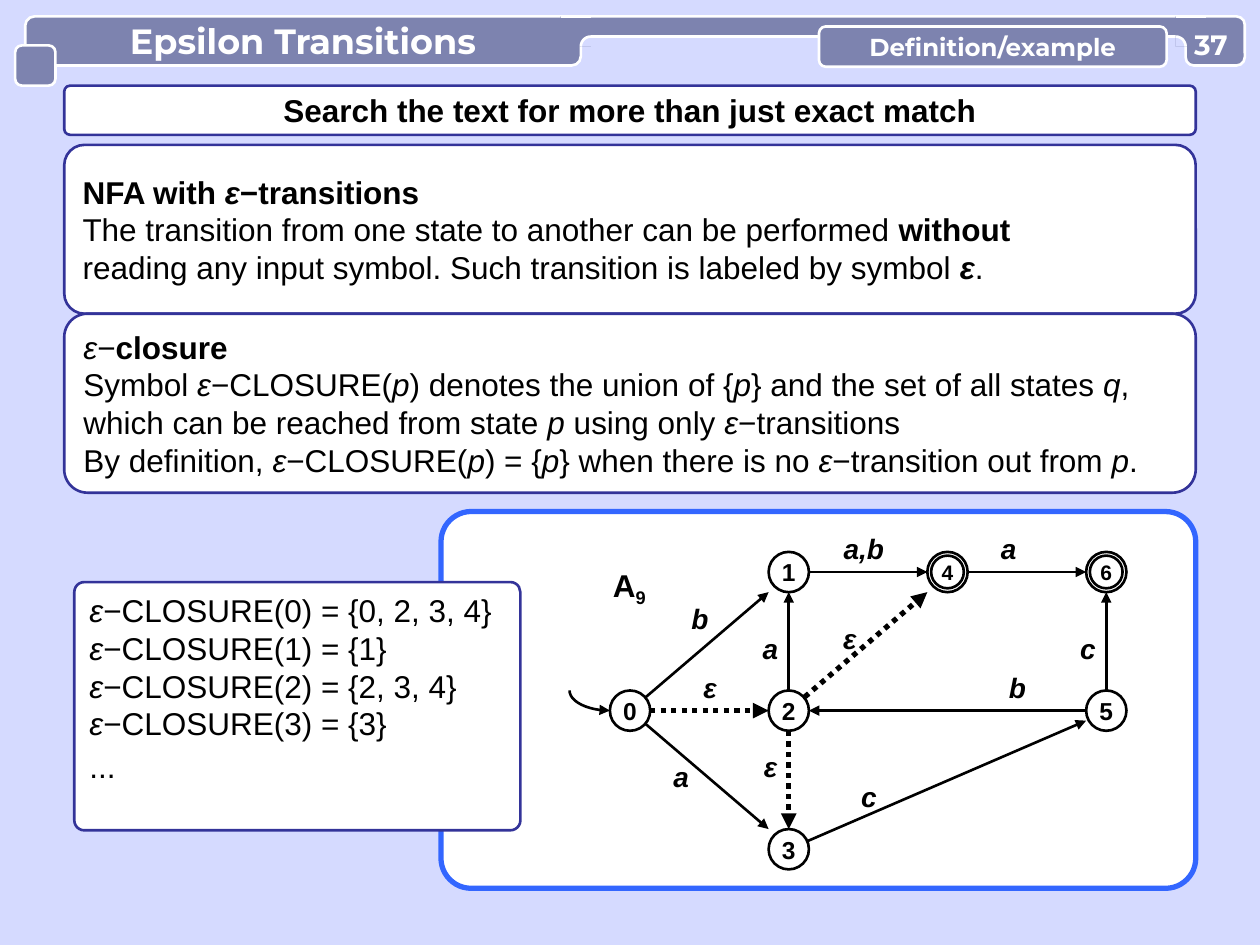
from dataclasses import dataclass
from math import cos, pi, sin

from lxml.etree import SubElement
from pptx import Presentation
from pptx.dml.color import RGBColor
from pptx.enum.dml import MSO_LINE
from pptx.enum.shapes import MSO_CONNECTOR, MSO_SHAPE
from pptx.enum.text import MSO_ANCHOR, MSO_AUTO_SIZE, PP_ALIGN
from pptx.oxml.ns import qn
from pptx.util import Inches, Pt


@dataclass(frozen=True)
class Theme:
    """Colours, fonts, type sizes and line widths."""
    background: str = "D5DAFF"
    header: str = "7D83AF"
    white: str = "FFFFFF"
    ink: str = "000000"
    panel: str = "333399"
    graph: str = "3366FF"
    body_font: str = "Arial"
    header_font: str = "Montserrat"
    title: int = 20
    body: int = 18
    label: int = 16
    state: int = 14
    final: int = 12
    thin: float = 1.5
    thick: float = 3


@dataclass(frozen=True)
class Box:
    """A rectangle in inches."""
    left: float
    top: float
    width: float
    height: float

    def inside(self, left, top, width, height):
        """Return a box placed relative to this one."""
        return Box(self.left + left, self.top + top, width, height)

    def lengths(self):
        """Return the four measures as lengths."""
        return [Inches(v) for v in (self.left, self.top, self.width, self.height)]


THEME = Theme()


def rgb(value):
    """Turn a hex string into a colour."""
    return RGBColor.from_string(value)


def square(x, y, radius):
    """Return the box around a circle."""
    return Box(x - radius, y - radius, 2 * radius, 2 * radius)


def paint(shape, fill, line, width=THEME.thin):
    """Set fill and line, where None means none."""
    shape.shadow.inherit = False
    for format_, color in ((shape.fill, fill), (shape.line.fill, line)):
        if color:
            format_.solid()
            format_.fore_color.rgb = rgb(color)
        else:
            format_.background()
    if line:
        shape.line.width = Pt(width)


def add_shape(slide, kind, box, fill, line, radius=None, width=THEME.thin):
    """Add a preset shape with an optional corner ratio."""
    shape = slide.shapes.add_shape(kind, *box.lengths())
    paint(shape, fill, line, width)
    if radius is not None:
        shape.adjustments[0] = radius
    return shape


def add_rounded(slide, box, radius, fill=THEME.header, line=THEME.white, width=THEME.thin):
    """Add a rounded rectangle."""
    return add_shape(slide, MSO_SHAPE.ROUNDED_RECTANGLE, box, fill, line, radius, width)


def write(shape, lines, size, color=THEME.ink, font=THEME.body_font, align=PP_ALIGN.CENTER,
          anchor=MSO_ANCHOR.MIDDLE, wrap=True, inset=(0.1, 0.05)):
    """Write lines in which stars mark bold and underscores inside them italic."""
    frame = shape.text_frame
    frame.auto_size, frame.word_wrap = MSO_AUTO_SIZE.NONE, wrap
    frame.vertical_anchor = anchor
    frame.margin_left = frame.margin_right = Inches(inset[0])
    frame.margin_top = frame.margin_bottom = Inches(inset[1])
    for index, line in enumerate(lines):
        paragraph = frame.add_paragraph() if index else frame.paragraphs[0]
        paragraph.alignment, paragraph.space_before = align, Pt(0)
        for bold, piece in enumerate(line.split("*")):
            for italic, text in enumerate(piece.split("_")):
                if text:
                    run = paragraph.add_run()
                    run.text = text
                    run.font.name, run.font.size = font, Pt(size)
                    run.font.bold, run.font.italic = bold % 2 == 1, italic % 2 == 1
                    run.font.color.rgb = rgb(color)
    return frame


def add_text(slide, box, text, size, **options):
    """Add a text box without insets."""
    return write(slide.shapes.add_textbox(*box.lengths()), [text], size, inset=(0, 0), **options)


def add_line(slide, start, end, color=THEME.ink, width=THEME.thin):
    """Add a straight line without shadow."""
    points = [Inches(v) for v in (*start, *end)]
    line = slide.shapes.add_connector(MSO_CONNECTOR.STRAIGHT, *points)
    line.line.color.rgb, line.line.width = rgb(color), Pt(width)
    SubElement(line._element.spPr, qn("a:effectLst"))
    return line


def add_arrowhead(line):
    """Put a triangle at the end of a line."""
    SubElement(line.line._get_or_add_ln(), qn("a:tailEnd"), type="triangle")


def add_quarter(slide, center, radii, start, turn, fill, line, steps=12):
    """Add a quarter ellipse, closed through its centre when filled."""
    angles = [start + turn * pi / 2 * step / steps for step in range(steps + 1)]
    points = [(center[0] + radii[0] * cos(a), center[1] + radii[1] * sin(a)) for a in angles]
    points += [center] if fill else []
    points = [(Inches(x), Inches(y)) for x, y in points]
    builder = slide.shapes.build_freeform(*points[0])
    builder.add_line_segments(points[1:], close=bool(fill))
    shape = builder.convert_to_shape()
    paint(shape, fill, line)
    return shape


def add_joint(slide, box, side):
    """Join a header tab to the bar, with the rounded notch on the given side."""
    add_shape(slide, MSO_SHAPE.RECTANGLE, box, THEME.header, None)
    right = box.left + box.width
    add_line(slide, (box.left, box.top), (right, box.top), THEME.white)
    center = (right if side < 0 else box.left, box.top + box.height)
    for fill, line in ((THEME.background, None), (None, THEME.white)):
        add_quarter(slide, center, (0.08, 0.08), -pi / 2, side, fill, line)


def add_header(slide, box):
    """Build the header bar with title, section and page number."""
    style = {"color": THEME.white, "font": THEME.header_font, "wrap": False}
    title_box = box.inside(0.08, 0, 4.41, 0.39)
    add_rounded(slide, title_box, 0.19)
    add_rounded(slide, box.inside(4.49, 0, 4.88, 0.16), 0.5)
    add_joint(slide, box.inside(4.33, 0, 0.24, 0.24), -1)
    add_rounded(slide, box.inside(0, 0.23, 0.32, 0.32), 0.17)
    add_rounded(slide, box.inside(9.29, 0, 0.47, 0.39), 0.17)
    add_joint(slide, box.inside(9.21, 0, 0.24, 0.24), 1)
    section = add_rounded(slide, box.inside(6.38, 0.08, 2.76, 0.32), 0.17)
    write(section, ["*Definition/example*"], THEME.state, **style)
    add_text(slide, box.inside(9.29, 0.09, 0.4, 0.27), "*37*", THEME.label, **style)
    title = slide.shapes.title
    title.left, title.top, title.width, title.height = title_box.lengths()
    write(title, ["*Epsilon Transitions*"], THEME.title, **style)
    slide.shapes._spTree.append(title._element)


def add_panel(slide, box, radius, lines, align=PP_ALIGN.LEFT):
    """Build a white panel with text."""
    panel = add_rounded(slide, box, radius, THEME.white, THEME.panel)
    write(panel, lines, THEME.body, align=align)


def add_closures(slide, box):
    """Build the list of closures on its panel."""
    add_rounded(slide, box, 0.04, THEME.white, THEME.panel)
    body = slide.placeholders[1]
    body.left, body.top, body.width, body.height = box.lengths()
    closures = ("0, 2, 3, 4", "1", "2, 3, 4", "3")
    lines = [f"_ε_−CLOSURE({state}) = {{{members}}}" for state, members in enumerate(closures)]
    frame = write(body, lines + ["..."], THEME.body, align=PP_ALIGN.LEFT,
                  anchor=MSO_ANCHOR.TOP, inset=(0.12, 0.07))
    for paragraph in frame.paragraphs:
        properties = paragraph._p.get_or_add_pPr()
        properties.set("marL", "0")
        properties.set("indent", "0")
        SubElement(properties, qn("a:buNone"))
    frame.paragraphs[-1].space_before = Pt(3)
    slide.shapes._spTree.append(body._element)


def add_automaton(slide, box):
    """Build the state diagram on its panel."""
    add_rounded(slide, box, 0.08, THEME.white, THEME.graph, width=THEME.thick)
    radius = 0.16
    grid = {0: (0, 1), 1: (1, 0), 2: (1, 1), 3: (1, 2), 4: (2, 0), 5: (3, 1), 6: (3, 0)}
    states = {name: (box.left + 1.5 + 1.26 * column, box.top + 0.48 + 1.1 * row)
              for name, (column, row) in grid.items()}
    middle, up, down, left, right = (0, 0), (0, -1), (0, 1), (-1, 0), (1, 0)
    edges = [
        (0, middle, 3, (-1, -1), "a", (1.9, 1.97)), (0, middle, 1, (-1, 1), "b", (2.05, 0.71)),
        (5, up, 6, down, "c", (5.13, 0.95)), (3, middle, 5, (-1, 0.5), "c", (3.39, 2.13)),
        (2, middle, 4, (-1, 1), "ε", (3.24, 0.87)), (0, right, 2, left, "ε", (2.13, 1.26)),
        (2, up, 1, down, "a", (2.61, 0.95)), (2, down, 3, up, "ε", (2.61, 1.89)),
        (5, left, 2, right, "b", (4.57, 1.26)), (1, right, 4, left, "a,b", (3.35, 0.16)),
        (4, right, 6, left, "a", (4.5, 0.16)),
    ]
    for source, source_side, target, target_side, label, (x, y) in edges:
        start, end = ([c + radius * s for c, s in zip(states[name], side)]
                      for name, side in ((source, source_side), (target, target_side)))
        line = add_line(slide, start, end, width=THEME.thick if label == "ε" else THEME.thin)
        if label == "ε":
            line.line.dash_style = MSO_LINE.ROUND_DOT
        add_arrowhead(line)
        add_text(slide, box.inside(x - 0.27, y, 0.55, 0.32), f"*_{label}_*", THEME.label,
                 anchor=MSO_ANCHOR.TOP)
    for name, center in states.items():
        circle = add_shape(slide, MSO_SHAPE.OVAL, square(*center, radius), THEME.white, THEME.ink)
        size = THEME.state
        if name in (4, 6):
            circle = add_shape(slide, MSO_SHAPE.OVAL, square(*center, 0.13), THEME.white, THEME.ink)
            size = THEME.final
        write(circle, [f"*{name}*"], size, wrap=False, inset=(0, 0))
    x, y = states[0]
    entry = add_quarter(slide, (x - radius, y - radius), (0.32, 0.16), pi, -1, None, THEME.ink)
    add_arrowhead(entry)
    frame = add_text(slide, box.inside(1.26, 0.4, 0.47, 0.4), "*A**9*", THEME.body, wrap=False)
    frame.paragraphs[0].runs[1]._r.get_or_add_rPr().set("baseline", "-25000")


def main():
    """Build the slide and save it."""
    presentation = Presentation()
    presentation.slide_width, presentation.slide_height = Inches(10), Inches(7.5)
    slide = presentation.slides.add_slide(presentation.slide_layouts[1])
    slide.background.fill.solid()
    slide.background.fill.fore_color.rgb = rgb(THEME.background)
    add_automaton(slide, Box(3.5, 4.06, 5.99, 2.99))
    add_panel(slide, Box(0.51, 1.15, 8.98, 1.34), 0.12, [
        "*NFA with _ε_−transitions*",
        "The transition from one state to another can be performed *without*",
        "reading any input symbol. Such transition is labeled by symbol *_ε_*."])
    add_panel(slide, Box(0.51, 2.49, 8.98, 1.42), 0.13, [
        "_ε_−*closure*",
        "Symbol _ε_−CLOSURE(_p_) denotes the union of {_p_} and the set of all states _q_,",
        "which can be reached from state _p _using only _ε_−transitions",
        "By definition, _ε_−CLOSURE(_p_) = {_p_} when there is no _ε_−transition out from _p_."])
    add_closures(slide, Box(0.59, 4.62, 3.54, 1.97))
    add_panel(slide, Box(0.51, 0.68, 8.98, 0.39), 0.12,
              ["*Search the text for more than just exact match*"], PP_ALIGN.CENTER)
    add_header(slide, Box(0.12, 0.13, 9.76, 0.55))
    presentation.save("out.pptx")


if __name__ == "__main__":
    main()
